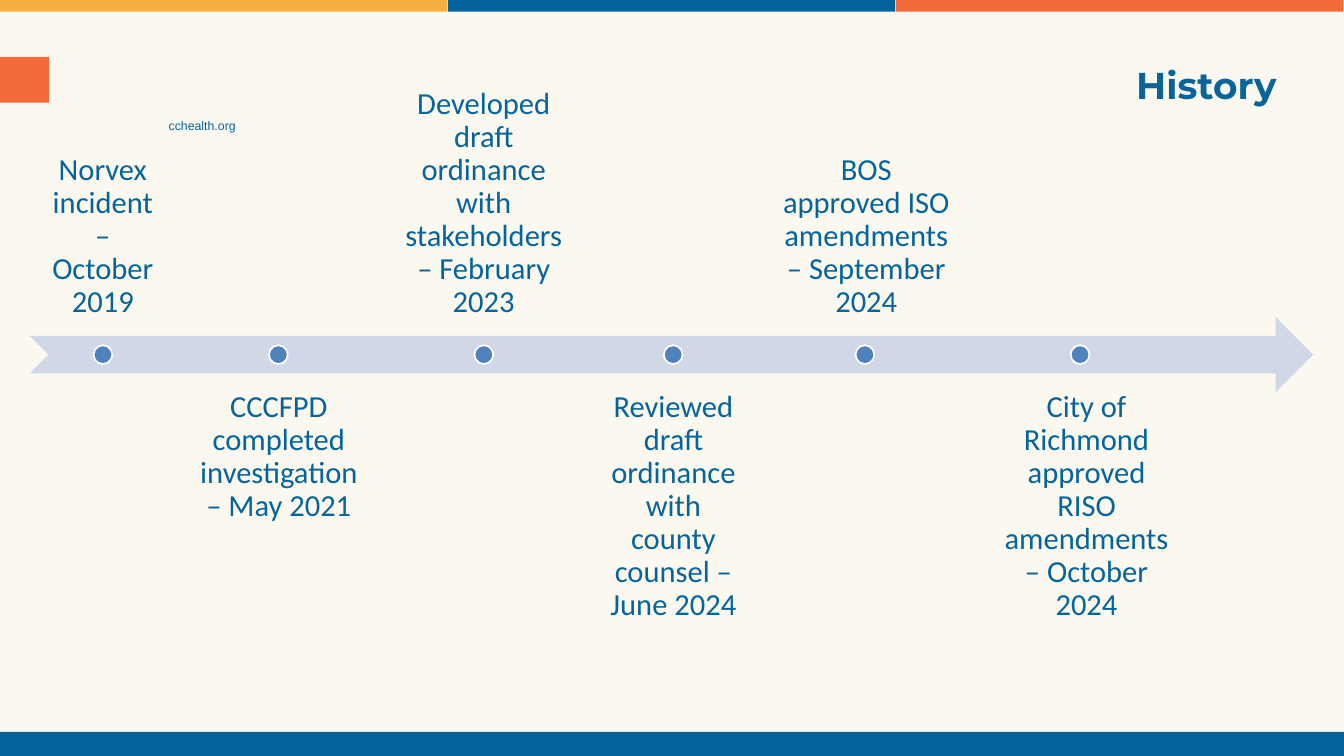
from dataclasses import dataclass

from pptx import Presentation
from pptx.dml.color import RGBColor
from pptx.enum import shapes, text
from pptx.util import Cm, Pt


@dataclass(frozen=True)
class Theme:
    cream: str = "FBF8EF"
    blue: str = "05639B"
    label_blue: str = "05649B"
    title_blue: str = "09649A"
    orange: str = "F26A39"
    yellow: str = "F9AF3F"
    arrow: str = "D0D8E8"
    dot: str = "4F81BD"
    white: str = "FFFFFF"
    title_size: float = 44
    label_size: float = 36
    address_size: float = 14.5


theme = Theme()
shape_kind = shapes.MSO_SHAPE
anchor = text.MSO_ANCHOR
align = text.PP_ALIGN

WIDTH, HEIGHT = 55.86, 31.42
BAND_HEIGHT = 1.0
ARROW_LEFT, ARROW_TOP, ARROW_WIDTH, ARROW_HEIGHT = 1.24, 13.18, 53.34, 3.12
AXIS = ARROW_TOP + ARROW_HEIGHT / 2
DOT = 0.78
LABEL_INSET = 0.71
ABOVE, BELOW = 10.85, 15.54

deck = Presentation()
deck.slide_width, deck.slide_height = Cm(WIDTH), Cm(HEIGHT)
slide = deck.slides.add_slide(deck.slide_layouts[5])
slide.background.fill.solid()
slide.background.fill.fore_color.rgb = RGBColor.from_string(theme.cream)


def add_filled(kind, left, top, width, height, color):
    shape = slide.shapes.add_shape(kind, Cm(left), Cm(top), Cm(width), Cm(height))
    shape.shadow.inherit = False
    shape.fill.solid()
    shape.fill.fore_color.rgb = RGBColor.from_string(color)
    shape.line.fill.background()
    return shape


def write(frame, words, font_name, size, color, inset=0, alignment=align.LEFT):
    """Fill a frame with one paragraph in one font and return that paragraph."""
    frame.auto_size = text.MSO_AUTO_SIZE.NONE
    frame.margin_left = frame.margin_right = Cm(inset)
    frame.margin_top = frame.margin_bottom = Cm(inset)
    paragraph = frame.paragraphs[0]
    paragraph.text = words
    paragraph.alignment = alignment
    paragraph.font.name = font_name
    paragraph.font.size = Pt(size)
    paragraph.font.color.rgb = RGBColor.from_string(color)
    return paragraph


# Page frame
address = slide.shapes.add_textbox(Cm(7.01), Cm(4.9), Cm(2.92), Cm(0.71))
address.text_frame.word_wrap = False
write(address.text_frame, "cchealth.org", "Arial", theme.address_size, theme.blue)

add_filled(shape_kind.RECTANGLE, 0, 2.36, 2.03, 1.91, theme.orange)
add_filled(shape_kind.RECTANGLE, 0, HEIGHT - BAND_HEIGHT, WIDTH, BAND_HEIGHT, theme.blue)
for index, color in enumerate((theme.yellow, theme.blue, theme.orange)):
    add_filled(shape_kind.RECTANGLE, index * WIDTH / 3, 0, 18.59, 0.49, color)

title = slide.shapes.title
title.left, title.top, title.width, title.height = Cm(18.62), Cm(2.59), Cm(34.44), Cm(1.88)
title.text_frame.vertical_anchor = anchor.TOP
heading = write(title.text_frame, "History", "Montserrat", theme.title_size,
                theme.title_blue, alignment=align.RIGHT)
heading.font.bold = True

# Timeline: label left, label width, dot centre, wording
milestones = [
    (1.24, 6.07, 4.28, "Norvex incident – October 2019"),
    (7.59, 8.0, 11.57, "CCCFPD completed investigation – May 2021"),
    (15.85, 8.51, 20.11, "Developed draft ordinance with stakeholders – February 2023"),
    (24.61, 6.76, 27.98, "Reviewed draft ordinance with county counsel – June 2024"),
    (31.7, 8.61, 35.95, "BOS approved ISO amendments – September 2024"),
    (40.79, 8.74, 44.89, "City of Richmond approved RISO amendments – October 2024"),
]
add_filled(shape_kind.NOTCHED_RIGHT_ARROW, ARROW_LEFT, ARROW_TOP,
           ARROW_WIDTH, ARROW_HEIGHT, theme.arrow)

for index, (left, width, dot_center, wording) in enumerate(milestones):
    is_above = index % 2 == 0
    label = slide.shapes.add_textbox(Cm(left), Cm(ABOVE if is_above else BELOW),
                                     Cm(width), Cm(ARROW_HEIGHT))
    label.text_frame.word_wrap = True
    label.text_frame.vertical_anchor = anchor.BOTTOM if is_above else anchor.TOP
    event = write(label.text_frame, wording, "Calibri", theme.label_size,
                  theme.label_blue, LABEL_INSET, align.CENTER)
    event.line_spacing = 0.9

    dot = add_filled(shape_kind.OVAL, dot_center - DOT / 2, AXIS - DOT / 2, DOT, DOT, theme.dot)
    dot.line.color.rgb = RGBColor.from_string(theme.white)
    dot.line.width = Pt(2)

deck.save("out.pptx")
